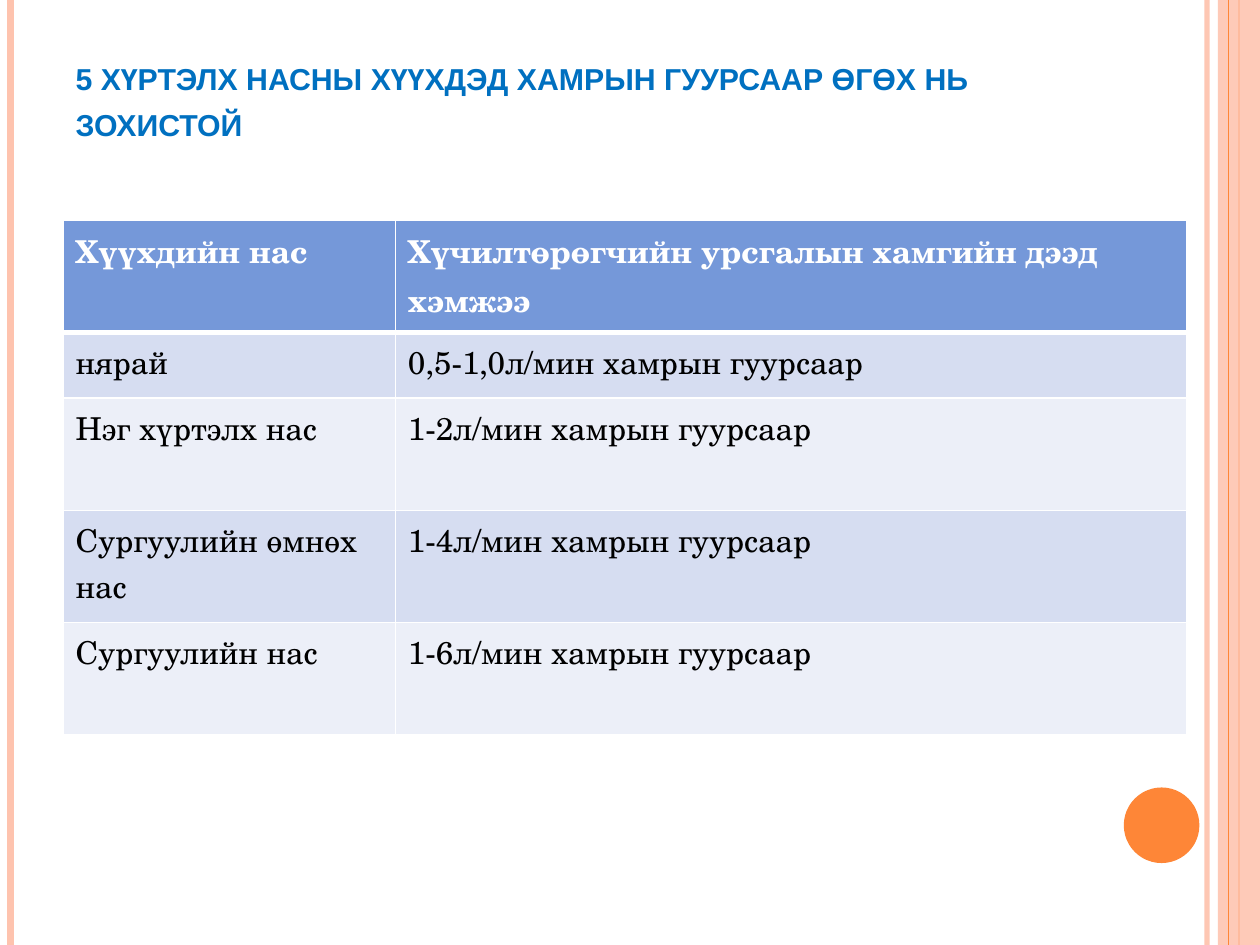
import pptx
import pptx.util
import pptx.dml.color
import pptx.enum.shapes
import pptx.enum.text
import pptx.oxml.ns
import lxml.etree

Pt = pptx.util.Pt
RGBColor = pptx.dml.color.RGBColor
qn = pptx.oxml.ns.qn

WHITE = RGBColor(0xFF, 0xFF, 0xFF)
BLACK = RGBColor(0x00, 0x00, 0x00)
PEACH = RGBColor(0xFE, 0xC3, 0xAE)
ORANGE = RGBColor(0xFE, 0x86, 0x37)
TITLE_BLUE = RGBColor(0x00, 0x70, 0xC0)
HEADER_BLUE = RGBColor(0x75, 0x98, 0xD9)
BANDS = (RGBColor(0xD6, 0xDD, 0xF1), RGBColor(0xEC, 0xEF, 0xF8))

PAGE_WIDTH, PAGE_HEIGHT = 720, 540
TITLE = "5 хүртэлх насны хүүхдэд хамрын гуурсаар өгөх нь зохистой"
COLUMN_WIDTHS = (189.9, 452.3)
ROW_HEIGHTS = (64.1, 37.4, 64.1, 64.1, 64.1)
OXYGEN_FLOW = (
    ("Хүүхдийн нас", "Хүчилтөрөгчийн урсгалын хамгийн дээд хэмжээ"),
    ("нярай", "0,5-1,0л/мин хамрын гуурсаар"),
    ("Нэг хүртэлх нас", "1-2л/мин хамрын гуурсаар"),
    ("Сургуулийн өмнөх нас", "1-4л/мин хамрын гуурсаар"),
    ("Сургуулийн нас", "1-6л/мин хамрын гуурсаар"),
)


def set_alpha(shape, percent):
    """Make the first solid colour of a shape partly transparent."""
    color = next(shape._element.spPr.iter(qn("a:srgbClr")))
    lxml.etree.SubElement(color, qn("a:alpha"), val=str(percent * 1000))


def add_rail(page, x, color, weight):
    """Draw a vertical line over the full height of the page."""
    rail = page.shapes.add_connector(
        pptx.enum.shapes.MSO_CONNECTOR.STRAIGHT, Pt(x), Pt(0), Pt(x), Pt(PAGE_HEIGHT))
    rail.line.color.rgb = color
    rail.line.width = Pt(weight)
    lxml.etree.SubElement(rail._element.spPr, qn("a:effectLst"))
    return rail


def add_plain_shape(page, kind, left, top, width, height, color):
    """Draw a filled preset shape without line or shadow."""
    shape = page.shapes.add_shape(kind, Pt(left), Pt(top), Pt(width), Pt(height))
    shape.shadow.inherit = False
    shape.fill.solid()
    shape.fill.fore_color.rgb = color
    shape.line.fill.background()
    return shape


def add_frame(page, width):
    """Draw the rails, the side band and the disc around the content."""
    kinds = pptx.enum.shapes.MSO_SHAPE
    set_alpha(add_rail(page, width - 30.2, PEACH, 3), 93)
    add_rail(page, 6, PEACH, 4.5)
    add_rail(page, width - 12, ORANGE, 1.5)
    band = add_plain_shape(page, kinds.RECTANGLE, width - 24, 0, 24, PAGE_HEIGHT, PEACH)
    set_alpha(band, 87)
    add_rail(page, width - 18, ORANGE, 0.75)
    add_plain_shape(page, kinds.OVAL, width - 77.8, 450, 43.2, 43.2, ORANGE)


def fill_title(page, left, top, width, height):
    """Place and format the title placeholder."""
    title = page.shapes.title
    title.left, title.top = Pt(left), Pt(top)
    title.width, title.height = Pt(width), Pt(height)
    frame = title.text_frame
    frame.word_wrap = True
    frame.auto_size = pptx.enum.text.MSO_AUTO_SIZE.NONE
    frame.vertical_anchor = pptx.enum.text.MSO_ANCHOR.BOTTOM
    frame.margin_bottom = Pt(29.3)
    para = frame.paragraphs[0]
    para.alignment = pptx.enum.text.PP_ALIGN.LEFT
    para.line_spacing = Pt(26.3)
    para.space_before = Pt(0)
    span = para.add_run()
    span.text = TITLE
    span.font.name = "Arial"
    span.font.size = Pt(21.6)
    span.font.bold = True
    span.font.color.rgb = TITLE_BLUE
    span._r.get_or_add_rPr().set("cap", "small")


def set_borders(cell, top, bottom):
    """Give a cell white borders, with the top and bottom weights given."""
    properties = cell._tc.get_or_add_tcPr()
    for side, weight in (("L", 1), ("R", 1), ("T", top), ("B", bottom)):
        border = lxml.etree.SubElement(properties, qn(f"a:ln{side}"), w=str(Pt(weight)))
        fill = lxml.etree.SubElement(border, qn("a:solidFill"))
        lxml.etree.SubElement(fill, qn("a:srgbClr"), val=str(WHITE))


def fill_cell(cell, text, row_index):
    """Write and colour one cell according to its row."""
    is_header = row_index == 0
    set_borders(cell, 3 if row_index == 1 else 1, 3 if is_header else 1)
    cell.fill.solid()
    cell.fill.fore_color.rgb = HEADER_BLUE if is_header else BANDS[(row_index - 1) % 2]
    span = cell.text_frame.paragraphs[0].add_run()
    span.text = text
    span.font.name = "TeX Gyre Schola"
    span.font.size = Pt(18)
    span.font.bold = is_header
    span.font.color.rgb = WHITE if is_header else BLACK


def add_flow_table(page, left, top):
    """Add the table of oxygen flow by age."""
    table = page.shapes.add_table(
        len(ROW_HEIGHTS), len(COLUMN_WIDTHS), Pt(left), Pt(top),
        Pt(sum(COLUMN_WIDTHS)), Pt(sum(ROW_HEIGHTS))).table
    for column, width in zip(table.columns, COLUMN_WIDTHS):
        column.width = Pt(width)
    for row_index, texts in enumerate(OXYGEN_FLOW):
        table.rows[row_index].height = Pt(ROW_HEIGHTS[row_index])
        for column_index, text in enumerate(texts):
            fill_cell(table.cell(row_index, column_index), text, row_index)


def main():
    """Build and save the deck."""
    deck = pptx.Presentation()
    deck.slide_width, deck.slide_height = Pt(PAGE_WIDTH), Pt(PAGE_HEIGHT)
    page = deck.slides.add_slide(deck.slide_layouts[5])
    page.background.fill.solid()
    page.background.fill.fore_color.rgb = WHITE
    add_frame(page, PAGE_WIDTH)
    fill_title(page, 36, 21.6, 588, 90)
    add_flow_table(page, 36, 126)
    deck.save("out.pptx")


if __name__ == "__main__":
    main()
